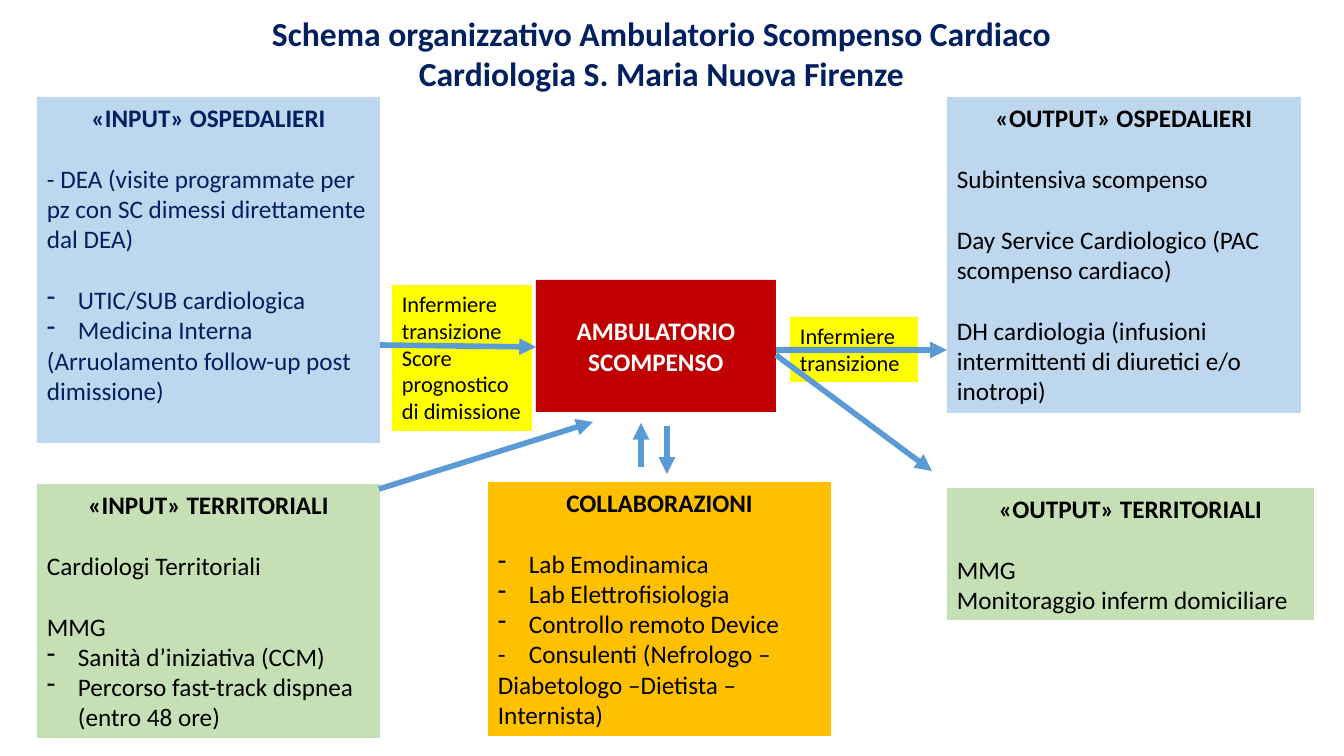
from lxml.etree import SubElement
from pptx import Presentation
from pptx.dml.color import RGBColor
from pptx.enum.shapes import MSO_CONNECTOR, MSO_SHAPE
from pptx.enum.text import MSO_ANCHOR, PP_ALIGN
from pptx.oxml.ns import qn
from pptx.util import Pt

COLORS = {
    "navy": "002060", "black": "000000", "white": "FFFFFF", "red": "C00000",
    "blue": "BDD7EE", "green": "C5E0B4", "orange": "FFC000", "yellow": "FFFF00",
    "arrow": "5B9BD5",
}
FONT = "Calibri"
EMU_PER_PX = 914400 / 100.8
HANG = 31
GAP = 22

TITLE = ["Schema organizzativo Ambulatorio Scompenso Cardiaco",
         "Cardiologia S. Maria Nuova Firenze"]
CENTER = ["AMBULATORIO", "SCOMPENSO"]
PANELS = [
    ((37, 97, 343, 346), "blue", "navy", "«INPUT» OSPEDALIERI", [
        ("gap", "- DEA (visite programmate per pz con SC dimessi direttamente dal DEA)"),
        ("gap bullet", "UTIC/SUB cardiologica"),
        ("bullet", "Medicina Interna"),
        ("", "(Arruolamento follow-up post dimissione)")]),
    ((37, 484, 343, 254), "green", "black", "«INPUT» TERRITORIALI", [
        ("gap", "Cardiologi Territoriali"),
        ("gap", "MMG"),
        ("bullet", "Sanità d’iniziativa (CCM)"),
        ("bullet", "Percorso fast-track dispnea (entro 48 ore)")]),
    ((947, 97, 354, 316), "blue", "black", "«OUTPUT» OSPEDALIERI", [
        ("gap", "Subintensiva scompenso"),
        ("gap", "Day Service Cardiologico (PAC scompenso cardiaco)"),
        ("gap", "DH cardiologia (infusioni intermittenti di diuretici e/o inotropi)")]),
    ((947, 488, 367, 132), "green", "black", "«OUTPUT» TERRITORIALI", [
        ("gap", "MMG"),
        ("", "Monitoraggio inferm domiciliare")]),
    ((488, 482, 343, 254), "orange", "black", "COLLABORAZIONI", [
        ("gap bullet", "Lab Emodinamica"),
        ("bullet", "Lab Elettrofisiologia"),
        ("bullet", "Controllo remoto Device"),
        ("tab", "-\tConsulenti (Nefrologo –Diabetologo –Dietista –Internista)")]),
]
NOTES = [
    ((392, 285, 140, 146), ["Infermiere transizione", "Score prognostico di dimissione"]),
    ((790, 317, 128, 65), ["Infermiere transizione"]),
]
ARROWS = [
    (380, 345, 536, 347), (776, 350, 947, 350), (776, 355, 932, 471),
    (379, 489, 593, 422), (641, 467, 641, 423), (667, 426, 667, 474),
]


def px(value):
    return round(value * EMU_PER_PX)


def color(name):
    return RGBColor.from_string(COLORS[name])


def add_box(page, frame, fill=None, anchor=MSO_ANCHOR.TOP):
    place = [px(value) for value in frame]
    if fill:
        box = page.shapes.add_shape(MSO_SHAPE.RECTANGLE, *place)
        box.shadow.inherit = False
        box.fill.solid()
        box.fill.fore_color.rgb = color(fill)
        box.line.fill.background()
    else:
        box = page.shapes.add_textbox(*place)
    box.text_frame.word_wrap = True
    box.text_frame.vertical_anchor = anchor
    return box


def add_text(box, text, size=18, ink="black", bold=False, centered=False, layout=""):
    frame = box.text_frame
    para = frame.paragraphs[0]
    if para.runs:
        para = frame.add_paragraph()
    para.alignment = PP_ALIGN.CENTER if centered else PP_ALIGN.LEFT
    if "gap" in layout:
        para.space_before = Pt(GAP)
    span = para.add_run()
    span.text = text
    span.font.name = FONT
    span.font.size = Pt(size)
    span.font.bold = bold
    span.font.color.rgb = color(ink)
    properties = para._p.get_or_add_pPr()
    if "bullet" in layout:
        properties.set("marL", str(px(HANG)))
        properties.set("indent", str(-px(HANG)))
        SubElement(properties, qn("a:buChar"), char="-")
    if "tab" in layout:
        stops = SubElement(properties, qn("a:tabLst"))
        SubElement(stops, qn("a:tab"), pos=str(px(HANG)), algn="l")


def add_arrow(page, ends):
    arrow = page.shapes.add_connector(MSO_CONNECTOR.STRAIGHT, *[px(end) for end in ends])
    arrow.line.width = Pt(4)
    arrow.line.color.rgb = color("arrow")
    SubElement(arrow.line._get_or_add_ln(), qn("a:tailEnd"), type="triangle")
    SubElement(arrow._element.spPr, qn("a:effectLst"))


def main():
    deck = Presentation()
    deck.slide_width, deck.slide_height = px(1344), px(756)
    page = deck.slides.add_slide(deck.slide_layouts[6])

    title = add_box(page, (247, 8, 829, 92))
    for line in TITLE:
        add_text(title, line, size=24, ink="navy", bold=True, centered=True)

    center = add_box(page, (536, 280, 240, 132), "red", MSO_ANCHOR.MIDDLE)
    for line in CENTER:
        add_text(center, line, ink="white", bold=True, centered=True)

    for frame, fill, ink, heading, lines in PANELS:
        panel = add_box(page, frame, fill)
        add_text(panel, heading, ink=ink, bold=True, centered=True)
        for layout, line in lines:
            add_text(panel, line, ink=ink, layout=layout)

    for frame, lines in NOTES:
        note = add_box(page, frame, "yellow")
        for line in lines:
            add_text(note, line, size=16)

    for ends in ARROWS:
        add_arrow(page, ends)

    deck.save("out.pptx")


if __name__ == "__main__":
    main()
